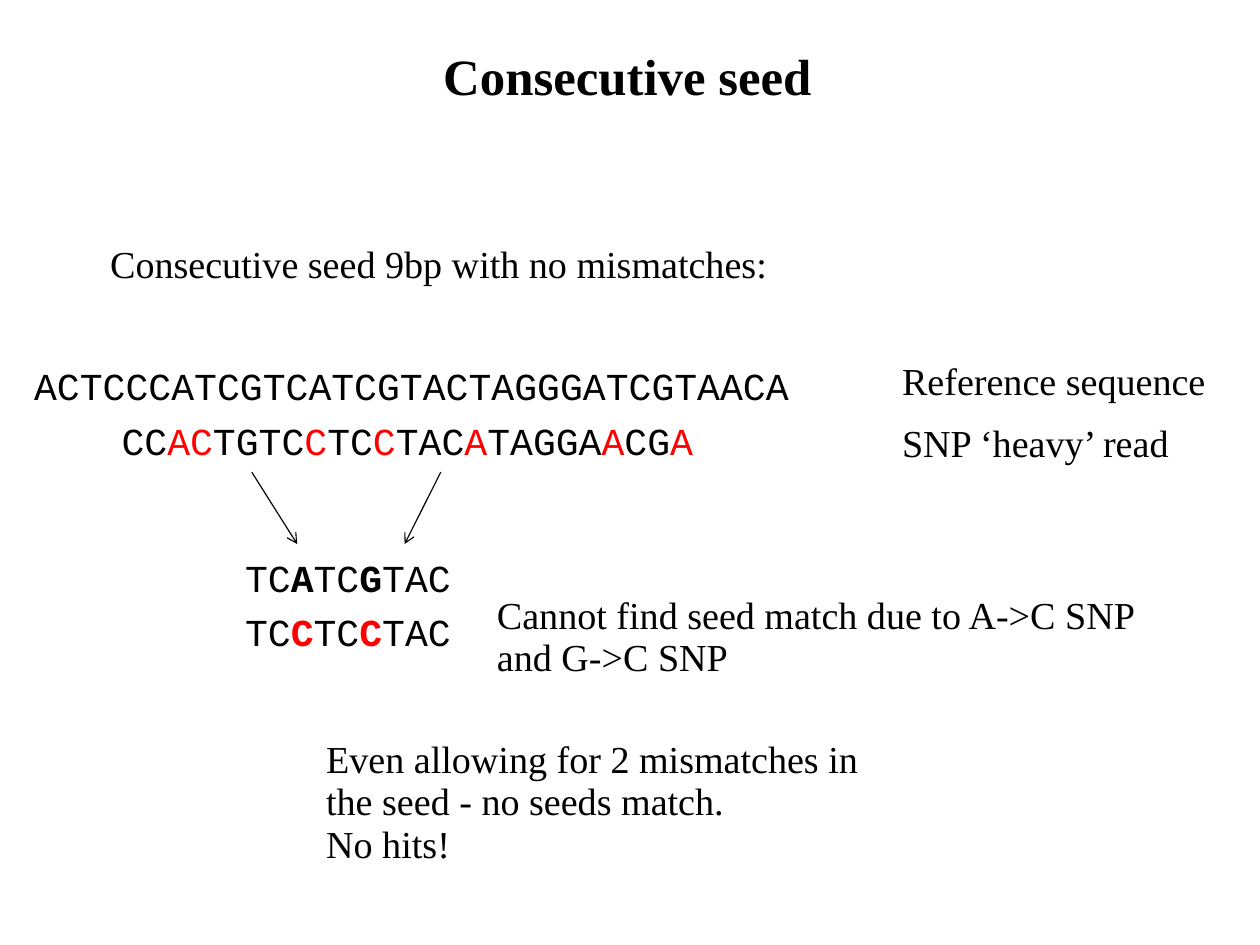
from dataclasses import dataclass

from lxml import etree
from pptx import Presentation
from pptx.dml.color import RGBColor
from pptx.enum.shapes import MSO_CONNECTOR
from pptx.enum.text import MSO_ANCHOR, MSO_AUTO_SIZE, PP_ALIGN
from pptx.oxml.ns import qn
from pptx.util import Pt

STRAIGHT = MSO_CONNECTOR.STRAIGHT
MIDDLE = MSO_ANCHOR.MIDDLE
GROW = MSO_AUTO_SIZE.SHAPE_TO_FIT_TEXT
CENTER = PP_ALIGN.CENTER
LEFT = PP_ALIGN.LEFT


@dataclass(frozen=True)
class Theme:
    ink: RGBColor = RGBColor(0, 0, 0)
    snp: RGBColor = RGBColor(255, 0, 0)
    prose: str = "Times New Roman"
    sequence: str = "Courier New"
    title_size: int = 32
    body_size: int = 24
    line_spacing: float = 0.93
    arrow_width: float = 0.75


THEME = Theme()
SLIDE_SIZE = (793.75, 595.25)
LINE_HEIGHT = 34.6
LABEL_LEFT, LABEL_WIDTH = 561.2, 232.5
SEED_LEFT, SEED_WIDTH = 147.3, 145.4
ARROW_TOP, ARROW_BOTTOM = 297.4, 342.7

PLAIN = (THEME.ink, False)
SNP = (THEME.snp, False)
BOLD = (THEME.ink, True)
BOLD_SNP = (THEME.snp, True)

TITLE = "Consecutive seed"

PROSE = [
    ((62.3, 150.5, 481.7, LINE_HEIGHT), ["Consecutive seed 9bp with no mismatches:"]),
    ((LABEL_LEFT, 223.9, LABEL_WIDTH, LINE_HEIGHT), ["Reference sequence"]),
    ((LABEL_LEFT, 263.5, LABEL_WIDTH, LINE_HEIGHT), ["SNP ‘heavy’ read"]),
    ((306, 371.3, 436.3, 61.2),
     ["Cannot find seed match due to A->C SNP and G->C SNP"]),
    ((198.4, 462, 357.1, 88.6),
     ["Even allowing for 2 mismatches in the seed - no seeds match.", "No hits!"]),
]

SEQUENCES = [
    ((14.4, 227.3, 668.9, LINE_HEIGHT), True,
     [("ACTCCCATCGTCATCGTACTAGGGATCGTAACA", PLAIN)]),
    ((69.5, 262.1, 521.3, LINE_HEIGHT), True,
     [("CC", PLAIN), ("AC", SNP), ("TGTC", PLAIN), ("C", SNP), ("TC", PLAIN),
      ("C", SNP), ("TAC", PLAIN), ("A", SNP), ("TAGGA", PLAIN), ("A", SNP),
      ("CG", PLAIN), ("A", SNP)]),
    ((SEED_LEFT, 348.5, SEED_WIDTH, LINE_HEIGHT), False,
     [("TC", PLAIN), ("A", BOLD), ("TC", PLAIN), ("G", BOLD), ("TAC", PLAIN)]),
    ((SEED_LEFT, 382.3, SEED_WIDTH, LINE_HEIGHT), False,
     [("TC", PLAIN), ("C", BOLD_SNP), ("TC", PLAIN), ("C", BOLD_SNP), ("TAC", PLAIN)]),
]

SEED_ARROWS = [(158.6, 187.2), (277.7, 254.9)]


def write_runs(paragraph, runs, font, size, align=LEFT):
    paragraph.alignment = align
    paragraph.line_spacing = THEME.line_spacing
    for wording, (color, bold) in runs:
        run = paragraph.add_run()
        run.text = wording
        run.font.name = font
        run.font.size = Pt(size)
        run.font.bold = bold
        run.font.color.rgb = color


def add_text(slide, box, lines, font, wrap=True):
    frame = slide.shapes.add_textbox(*map(Pt, box)).text_frame
    frame.word_wrap = wrap
    frame.auto_size = GROW
    for index, runs in enumerate(lines):
        paragraph = frame.add_paragraph() if index else frame.paragraphs[0]
        write_runs(paragraph, runs, font, THEME.body_size)


def add_title(slide):
    title = slide.shapes.title
    title.left, title.top, title.width, title.height = map(Pt, (56.6, 0, 677.5, 99.4))
    frame = title.text_frame
    frame.margin_left = frame.margin_right = frame.margin_top = frame.margin_bottom = 0
    frame.vertical_anchor = MIDDLE
    write_runs(frame.paragraphs[0], [(TITLE, BOLD)], THEME.prose, THEME.title_size, CENTER)


def add_arrow(slide, start, end):
    arrow = slide.shapes.add_connector(
        STRAIGHT, Pt(start), Pt(ARROW_TOP), Pt(end), Pt(ARROW_BOTTOM))
    arrow.line.color.rgb = THEME.ink
    arrow.line.width = Pt(THEME.arrow_width)
    etree.SubElement(arrow.line._get_or_add_ln(), qn("a:tailEnd"), type="arrow")
    etree.SubElement(arrow._element.spPr, qn("a:effectLst"))


def main():
    deck = Presentation()
    deck.slide_width, deck.slide_height = map(Pt, SLIDE_SIZE)
    slide = deck.slides.add_slide(deck.slide_layouts[5])
    add_title(slide)
    for box, lines in PROSE:
        add_text(slide, box, [[(line, PLAIN)] for line in lines], THEME.prose)
    for box, wrap, runs in SEQUENCES:
        add_text(slide, box, [runs], THEME.sequence, wrap)
    for start, end in SEED_ARROWS:
        add_arrow(slide, start, end)
    deck.save("out.pptx")


if __name__ == "__main__":
    main()
